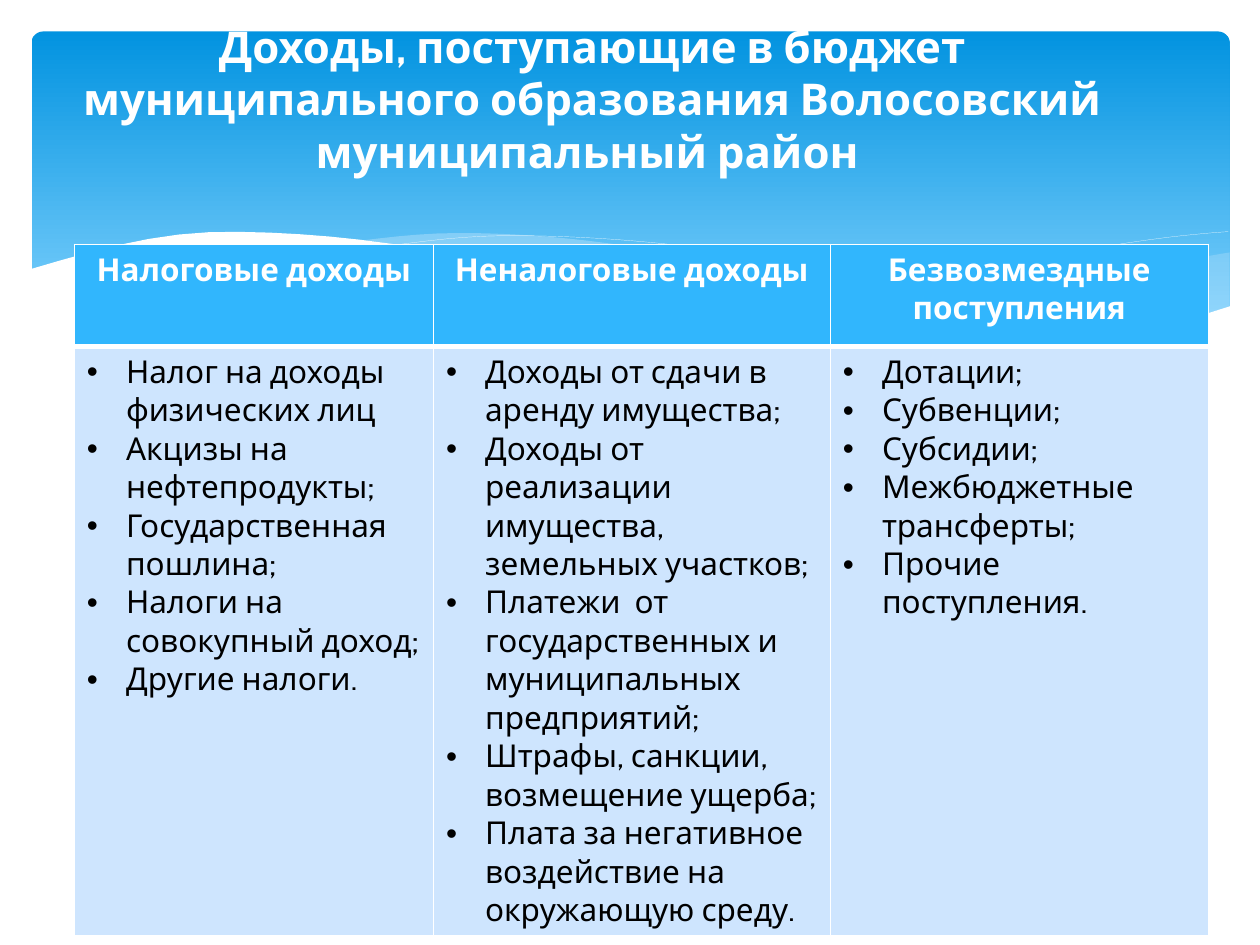
from itertools import pairwise
from math import cos, pi

from lxml.etree import SubElement
from pptx import Presentation
from pptx.dml.color import RGBColor
from pptx.enum.shapes import MSO_SHAPE
from pptx.enum.text import MSO_ANCHOR, PP_ALIGN
from pptx.oxml import parse_xml
from pptx.oxml.ns import nsdecls, qn
from pptx.util import Inches, Pt

COLORS = {
    "white": "FFFFFF", "black": "000000", "deep": "0293E0", "light": "83D3FE",
    "mist": "C6E7FC", "head": "31B6FD", "body": "CEE5FE",
}
RGB = {name: RGBColor.from_string(code) for name, code in COLORS.items()}
FONT = "Cabin"
STEPS = 40


def trace(bends, left, right):
    points = []
    for step in range(STEPS + 1):
        x = left + (right - left) * step / STEPS
        for (x1, y1), (x2, y2) in pairwise(bends):
            if x1 <= x <= x2:
                ease = (1 - cos(pi * (x - x1) / (x2 - x1))) / 2
                points.append((x, y1 + (y2 - y1) * ease))
                break
    return points


def style(para, size, color, bold):
    para.font.name = FONT
    para.font.size = Pt(size)
    para.font.bold = bold
    para.font.color.rgb = RGB[color]


deck = Presentation()
deck.slide_width = Inches(10)
deck.slide_height = Inches(7.5)
slide = deck.slides.add_slide(deck.slide_layouts[6])
shapes = slide.shapes

panel = shapes.add_shape(MSO_SHAPE.ROUNDED_RECTANGLE, Inches(0.25), Inches(0.25), Inches(9.51), Inches(2.7))
panel.adjustments[0] = 0.034
panel.shadow.inherit = False
panel.line.fill.background()
panel.fill.gradient()
panel.fill.gradient_angle = 270
for stop, (spot, color) in zip(panel.fill.gradient_stops, [(0, "deep"), (0.9, "light")]):
    stop.position = spot
    stop.color.rgb = RGB[color]

front = [(-1.2, 2.4), (1.8, 1.84), (8.1, 2.77), (11.4, 2.1)]
middle = [(2, 1.98), (3.65, 1.85), (9.8, 2.78)]
back = [(5, 2.77), (11.5, 1.85)]
crest = [(2, 2.05), (4.05, 1.87), (13, 3.3)]
rise = [(4.2, 2.75), (10.3, 1.82)]
floor = [(0, 3.29), (10, 3.29)]

waves = [
    (back, front, 6.61, 9.76, "mist", 29),
    (middle, front, 2.86, 8.93, "mist", 40),
    (crest, None, 3.09, 9.07, "white", 100),
    (rise, None, 6.13, 9.75, "white", 100),
    (front, floor, 0.23, 9.77, "white", 100),
]
for top, base, left, right, color, alpha in waves:
    points = trace(top, left, right)
    if base:
        points += reversed(trace(base, left, right))
    spots = [(Inches(x), Inches(y)) for x, y in points]
    pen = shapes.build_freeform(*spots[0])
    pen.add_line_segments(spots[1:], close=base is not None)
    wave = pen.convert_to_shape()
    wave.shadow.inherit = False
    if base:
        wave.line.fill.background()
        wave.fill.solid()
        wave.fill.fore_color.rgb = RGB[color]
        tint = wave._element.spPr.find(".//" + qn("a:srgbClr"))
        SubElement(tint, qn("a:alpha"), val=str(alpha * 1000))
    else:
        wave.fill.background()
        wave.line.color.rgb = RGB[color]
        wave.line.width = Pt(0.1)

columns = [
    (2.85, "Налоговые доходы", [
        "Налог на доходы физических лиц",
        "Акцизы на нефтепродукты;",
        "Государственная пошлина;",
        "Налоги на совокупный доход;",
        "Другие налоги."]),
    (3.15, "Неналоговые доходы", [
        "Доходы от сдачи в аренду имущества;",
        "Доходы от реализации имущества, земельных участков;",
        "Платежи  от государственных и муниципальных предприятий;",
        "Штрафы, санкции, возмещение ущерба;",
        "Плата за негативное воздействие на окружающую среду."]),
    (3, "Безвозмездные поступления", [
        "Дотации;",
        "Субвенции;",
        "Субсидии;",
        "Межбюджетные трансферты;",
        "Прочие поступления."]),
]
table = shapes.add_table(2, 3, Inches(0.59), Inches(1.94), Inches(9), Inches(5.32)).table
table.rows[0].height = Inches(0.81)
table.rows[1].height = Inches(4.51)
for col, (width, head, items) in enumerate(columns):
    table.columns[col].width = Inches(width)
    for row, lines in enumerate([[head], items]):
        cell = table.cell(row, col)
        cell.fill.solid()
        cell.fill.fore_color.rgb = RGB["body" if row else "head"]
        cell.text = "\n".join(lines)
        for para in cell.text_frame.paragraphs:
            style(para, 18, "black" if row else "white", not row)
            if row:
                props = para._p.get_or_add_pPr()
                props.set("marL", str(Inches(0.31)))
                props.set("indent", str(-Inches(0.31)))
                SubElement(props, qn("a:buFont"), typeface="Arial")
                SubElement(props, qn("a:buChar"), char="•")
                props.append(props.find(qn("a:defRPr")))
            else:
                para.alignment = PP_ALIGN.CENTER
        thick = "T" if row else "B"
        for place, side in enumerate("LRTB"):
            size = Pt(3 if side == thick else 1)
            cell._tc.get_or_add_tcPr().insert(place, parse_xml(
                f'<a:ln{side} {nsdecls("a")} w="{size}"><a:solidFill>'
                f'<a:srgbClr val="{COLORS["white"]}"/></a:solidFill></a:ln{side}>'))

title = shapes.add_textbox(Inches(0.2), Inches(0.52), Inches(9), Inches(0.94)).text_frame
title.word_wrap = True
title.vertical_anchor = MSO_ANCHOR.MIDDLE
title.text = "Доходы, поступающие в бюджет\vмуниципального образования Волосовский муниципальный район \v"
style(title.paragraphs[0], 25, "white", True)
title.paragraphs[0].alignment = PP_ALIGN.CENTER

deck.save("out.pptx")
